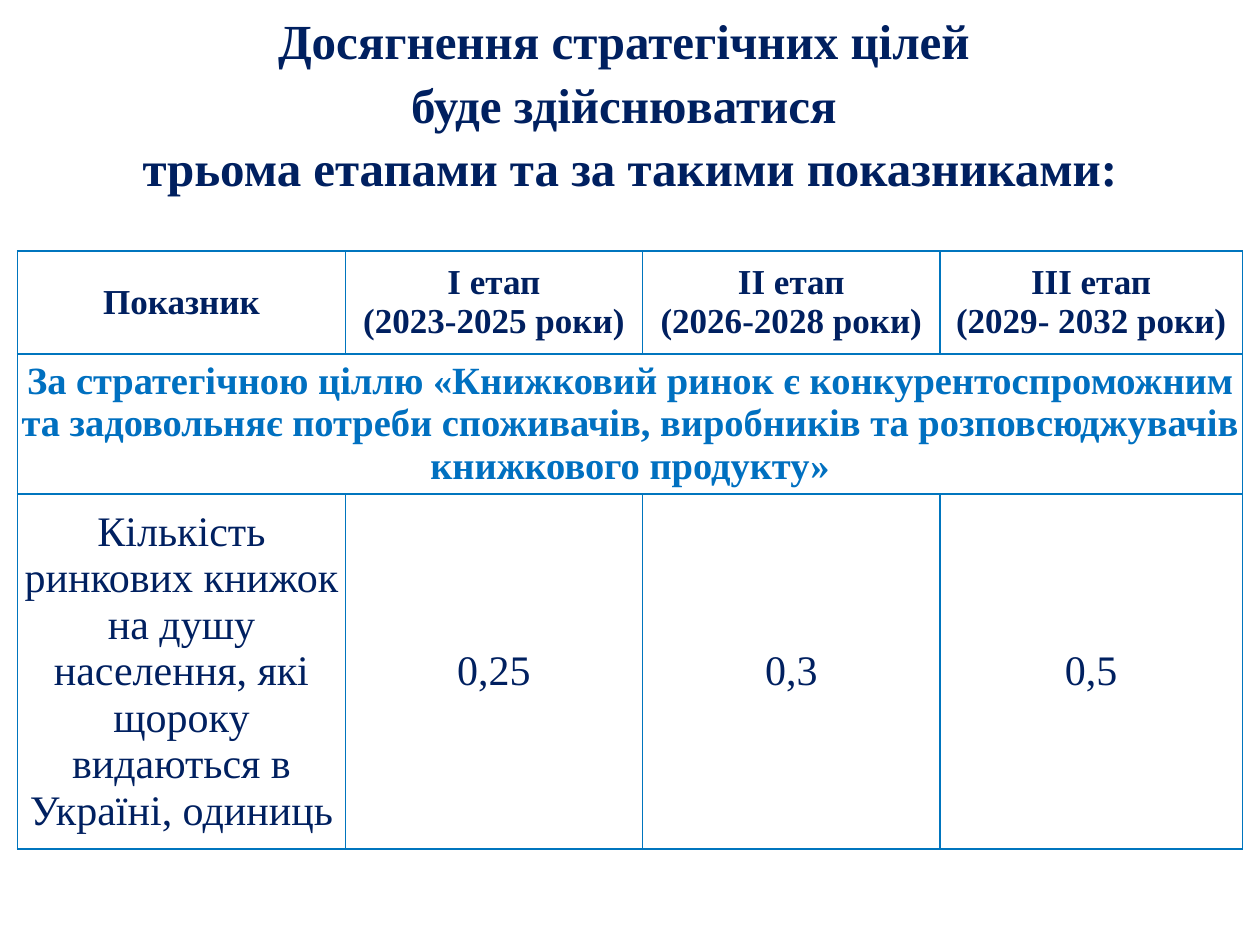
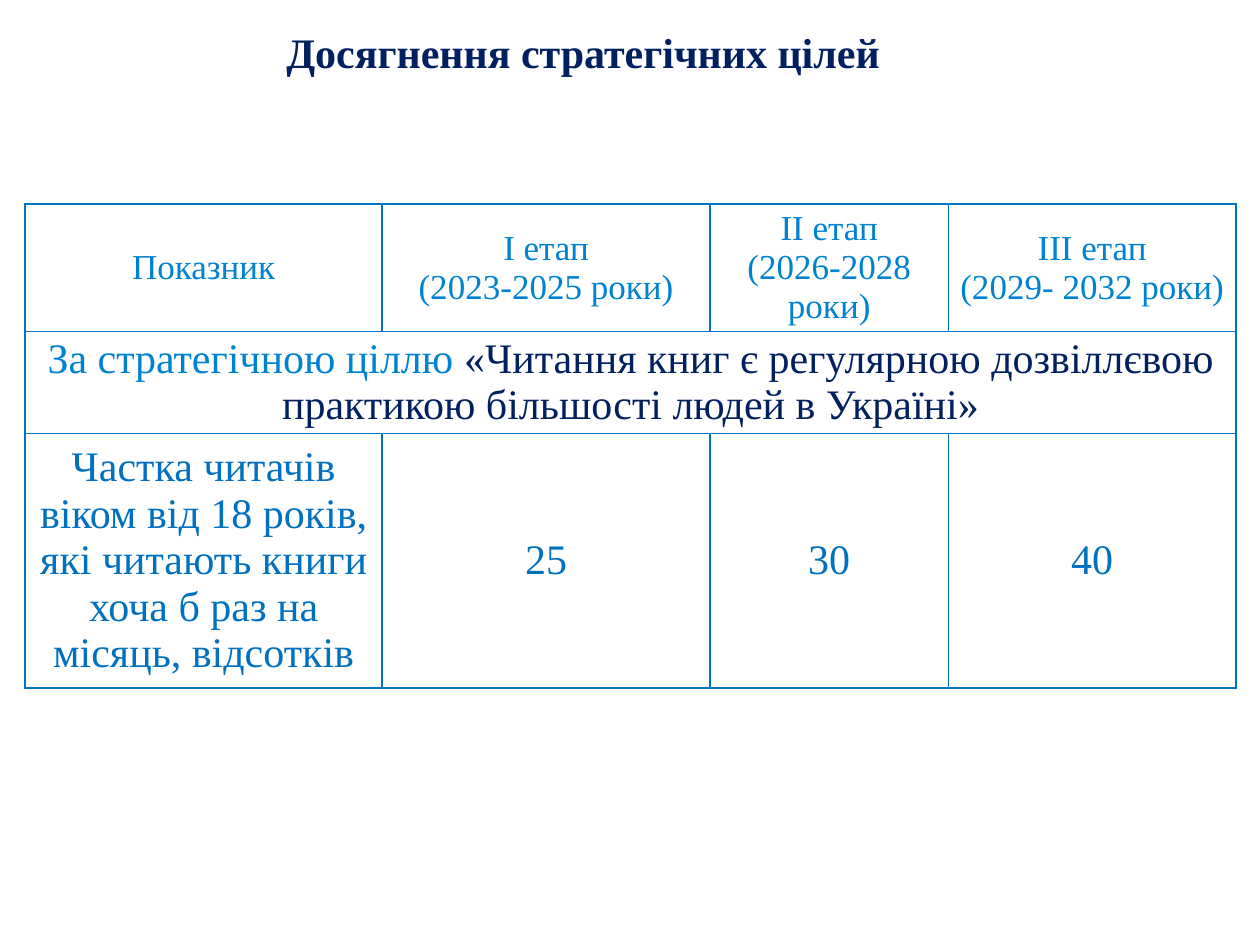
from pptx import Presentation
from pptx.dml.color import RGBColor
from pptx.enum.text import MSO_ANCHOR, MSO_AUTO_SIZE, PP_ALIGN
from pptx.oxml import parse_xml
from pptx.oxml.ns import nsdecls
from pptx.util import Inches, Pt

SLIDE_WIDTH, SLIDE_HEIGHT = Inches(10), Inches(7.5)
TITLE_ONLY = 5
FONT = "Times New Roman"
NAVY, BLUE, SKY, BORDER = "002060", "0070C0", "0082D2", "0075BE"
STAGES = (
    "Показник",
    "I етап\v(2023-2025 роки)",
    "II етап\v(2026-2028 роки)",
    "III етап\v(2029- 2032 роки)",
)


def rgb(value):
    """Turn a hex string into a colour."""
    return RGBColor.from_string(value)


def style_font(font, size, color, bold=False):
    """Apply the deck's typeface with the given size, colour and weight."""
    font.name, font.size, font.bold = FONT, Pt(size), bold
    font.color.rgb = rgb(color)


def place_title(slide, box, text, size):
    """Fit the slide title into a box and centre its lines."""
    title = slide.shapes.title
    title.left, title.top, title.width, title.height = map(Inches, box)
    frame = title.text_frame
    frame.text = text
    frame.word_wrap = True
    frame.auto_size = MSO_AUTO_SIZE.NONE
    frame.vertical_anchor = MSO_ANCHOR.TOP
    for line in frame.paragraphs:
        line.alignment = PP_ALIGN.CENTER
        line.line_spacing = 1.08
        for run in line.runs:
            style_font(run.font, size, NAVY, True)


def outline_cell(cell):
    """Draw the four thin borders of a cell and leave it unfilled."""
    properties = cell._tc.get_or_add_tcPr()
    for side in "LRTB":
        properties.append(parse_xml(
            f'<a:ln{side} {nsdecls("a")} w="{Pt(1)}"><a:solidFill>'
            f'<a:srgbClr val="{BORDER}"/></a:solidFill></a:ln{side}>'))
    cell.fill.background()


def write_cell(cell, parts, size, bold=False):
    """Write coloured text parts in the middle of a cell."""
    cell.vertical_anchor = MSO_ANCHOR.MIDDLE
    cell.margin_left = cell.margin_right = Inches(0.01)
    cell.margin_top = cell.margin_bottom = Inches(0.01)
    paragraph = cell.text_frame.paragraphs[0]
    paragraph.text = parts[0][0]
    paragraph.alignment = PP_ALIGN.CENTER
    for run in paragraph.runs:
        style_font(run.font, size, parts[0][1], bold)
    for text, color in parts[1:]:
        run = paragraph.add_run()
        run.text = text
        style_font(run.font, size, color, bold)


def place_stage_table(slide, box, columns, rows, goal, indicator,
                      header_color, indicator_color, goal_size=24, bold=False):
    """Fill a box with stage headings, a goal band and one indicator row."""
    left, top, width, height = map(Inches, box)
    table = slide.shapes.add_table(3, 4, left, top, width, height).table
    for column, share in zip(table.columns, columns):
        column.width = round(width * share / sum(columns))
    for row, share in zip(table.rows, rows):
        row.height = round(height * share / sum(rows))
    for cell in table.iter_cells():
        outline_cell(cell)
    table.cell(1, 0).merge(table.cell(1, 3))
    write_cell(table.cell(1, 0), goal, goal_size, bold)
    for index, (stage, value) in enumerate(zip(STAGES, indicator)):
        write_cell(table.cell(0, index), [(stage, header_color)], 20, bold)
        write_cell(table.cell(2, index), [(value, indicator_color)], 24)


def build_market_slide(deck):
    """Show the staged indicator of the book market goal."""
    slide = deck.slides.add_slide(deck.slide_layouts[TITLE_ONLY])
    place_title(slide, (0, 0, 10, 1.51),
                "Досягнення стратегічних цілей \nбуде здійснюватися \n"
                "трьома етапами та за такими показниками:", 28)
    goal = [("За стратегічною ціллю «Книжковий ринок є конкурентоспроможним "
             "та задовольняє потреби споживачів, виробників та "
             "розповсюджувачів книжкового продукту»", BLUE)]
    indicator = ("Кількість ринкових книжок на душу населення, які щороку "
                 "видаються в Україні, одиниць", "0,25", "0,3", "0,5")
    place_stage_table(slide, (0.14, 1.99, 9.72, 4.75),
                      (2.6, 2.36, 2.36, 2.4), (0.82, 1.11, 2.82),
                      goal, indicator, NAVY, NAVY, goal_size=22, bold=True)


def build_reading_slide(deck):
    """Show the staged indicator of the regular reading goal."""
    slide = deck.slides.add_slide(deck.slide_layouts[TITLE_ONLY])
    place_title(slide, (2.17, 0.13, 5, 0.5),
                "Досягнення стратегічних цілей ", 24)
    goal = [("За стратегічною ціллю ", SKY),
            ("«Читання книг є регулярною дозвіллєвою практикою більшості "
             "людей в Україні»", NAVY)]
    indicator = ("Частка читачів віком від 18 років, які читають книги "
                 "хоча б раз на місяць, відсотків", "25", "30", "40")
    place_stage_table(slide, (0.2, 1.62, 9.61, 3.84),
                      (2.83, 2.6, 1.89, 2.28), (1.01, 0.81, 2.02),
                      goal, indicator, SKY, BLUE)


def main():
    """Build both slides and save the deck."""
    deck = Presentation()
    deck.slide_width, deck.slide_height = SLIDE_WIDTH, SLIDE_HEIGHT
    build_market_slide(deck)
    build_reading_slide(deck)
    deck.save("out.pptx")


if __name__ == "__main__":
    main()
